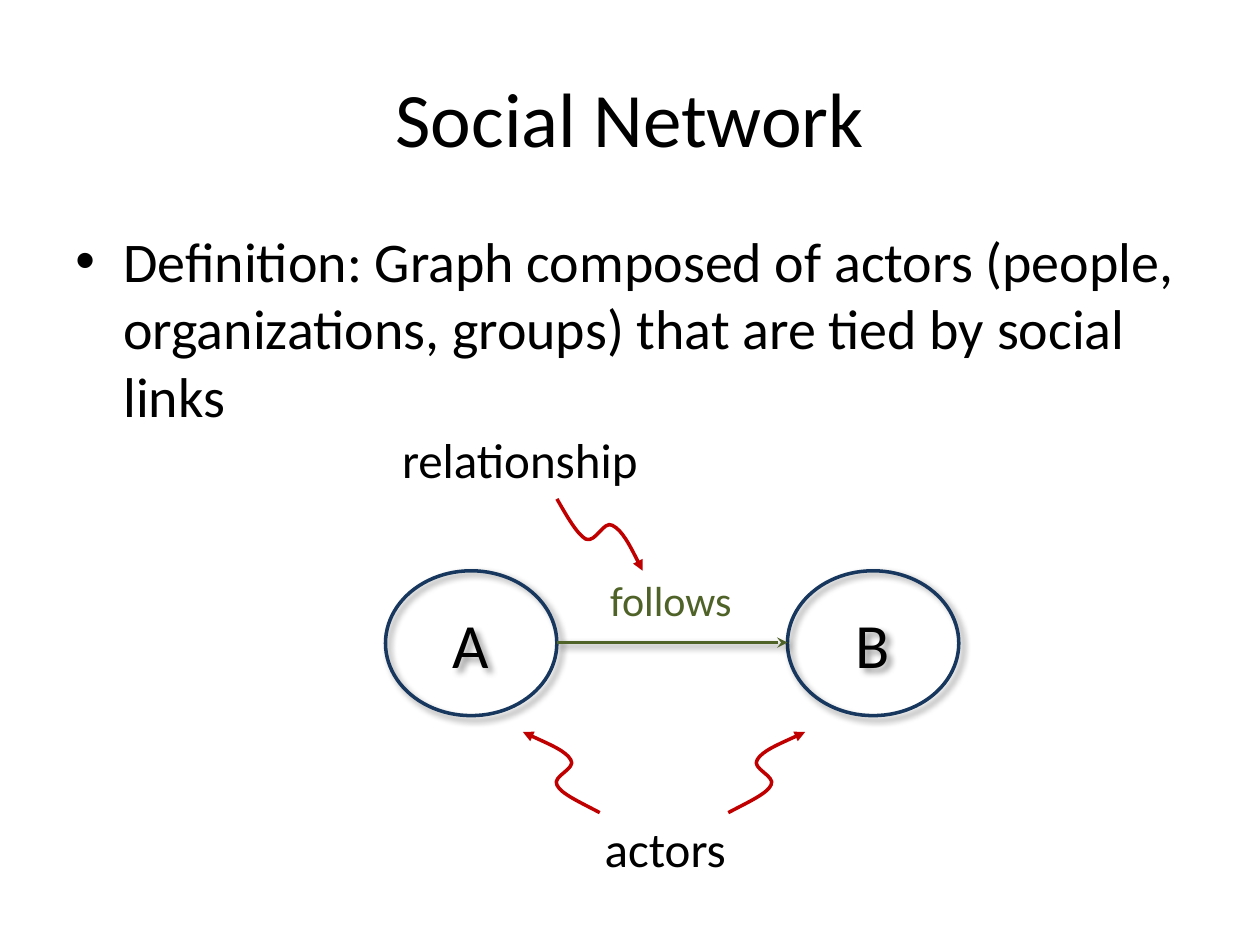
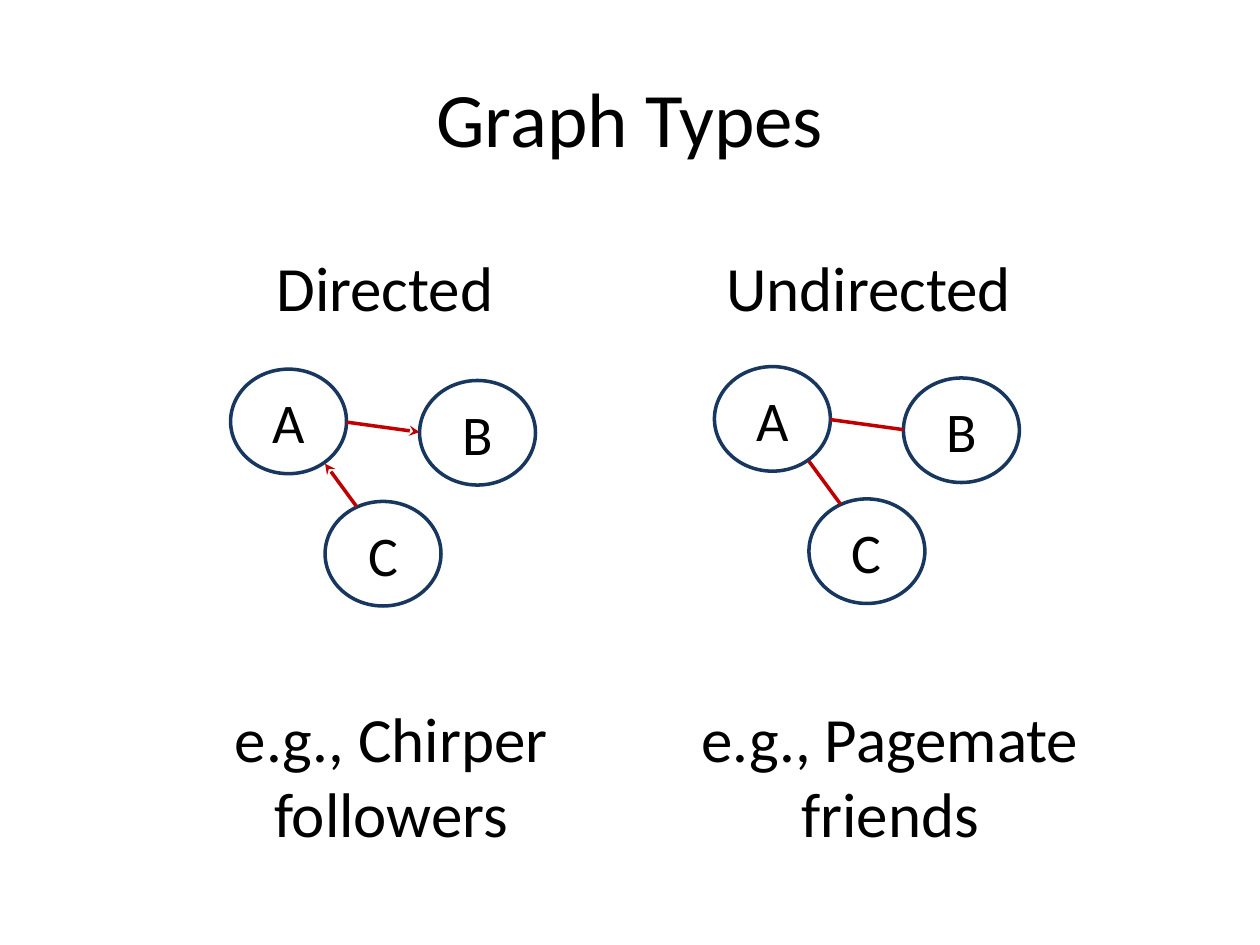
from lxml import etree
from pptx import Presentation
from pptx.dml.color import RGBColor
from pptx.enum.shapes import MSO_CONNECTOR, MSO_SHAPE
from pptx.enum.text import MSO_ANCHOR, PP_ALIGN
from pptx.oxml.ns import qn
from pptx.util import Pt

PX = 9144  # EMU per px, 100 px to the inch
FONT = "Calibri"
BLACK = RGBColor(0x00, 0x00, 0x00)
WHITE = RGBColor(0xFF, 0xFF, 0xFF)
NAVY = RGBColor(0x17, 0x37, 0x5E)
GREEN = RGBColor(0x4F, 0x62, 0x28)
RED = RGBColor(0xC0, 0x00, 0x00)

OVAL = MSO_SHAPE.OVAL
STRAIGHT = MSO_CONNECTOR.STRAIGHT
CENTER, LEFT = PP_ALIGN.CENTER, PP_ALIGN.LEFT
MIDDLE, TOP = MSO_ANCHOR.MIDDLE, MSO_ANCHOR.TOP


# ---- Shared helpers ----
def emu(*lengths):
    return [n * PX for n in lengths]


def write(sp, text, size, color=BLACK, align=CENTER, anchor=MIDDLE):
    tf = sp.text_frame
    tf.word_wrap = True
    tf.vertical_anchor = anchor
    tf.text = text
    p = tf.paragraphs[0]
    p.alignment = align
    font = p.runs[0].font
    font.name, font.size = FONT, Pt(size)
    font.color.rgb = color
    return p


def label(slide, box, text, size, color=BLACK, align=CENTER):
    sp = slide.shapes.add_textbox(*emu(*box))
    return write(sp, text, size, color, align, TOP)


def style_line(sp, color, arrow=None):
    sp.line.color.rgb = color
    sp.line.width = Pt(2)
    if arrow:
        etree.SubElement(sp.line._get_or_add_ln(), qn("a:tailEnd"), type=arrow)


def set_effects(sp, shadow=False):
    """Replace the theme effect by none, or by a soft shadow."""
    effects = etree.SubElement(sp._element.spPr, qn("a:effectLst"))
    if shadow:
        outer = etree.SubElement(effects, qn("a:outerShdw"), blurRad=str(Pt(4)),
                                 dist=str(Pt(3)), dir="2700000", algn="tl", rotWithShape="0")
        color = etree.SubElement(outer, qn("a:srgbClr"), val=str(BLACK))
        etree.SubElement(color, qn("a:alpha"), val="40000")


def add_node(shapes, box, text, size, fill=None, shadow=False):
    sp = shapes.add_shape(OVAL, *emu(*box))
    if fill is None:
        sp.fill.background()
    else:
        sp.fill.solid()
        sp.fill.fore_color.rgb = fill
    style_line(sp, NAVY)
    set_effects(sp, shadow)
    write(sp, text, size)


def add_edge(shapes, start, end, color, arrow=None, shadow=False):
    line = shapes.add_connector(STRAIGHT, *emu(*start, *end))
    style_line(line, color, arrow)
    set_effects(line, shadow)


def add_squiggle(slide, points):
    """Draw a curved pointer: a start, then three points per Bezier segment."""
    builder = slide.shapes.build_freeform(*points[0], scale=PX)
    builder.add_line_segments(points[1:], close=False)
    sp = builder.convert_to_shape()
    steps = list(sp._element.iter(qn("a:lnTo")))
    for i in range(0, len(steps), 3):
        curve = etree.Element(qn("a:cubicBezTo"))
        steps[i].addprevious(curve)
        for step in steps[i:i + 3]:
            curve.append(step[0])
            step.getparent().remove(step)
    sp.fill.background()
    style_line(sp, RED, "triangle")
    set_effects(sp)


def titled_slide(prs, title):
    slide = prs.slides.add_slide(prs.slide_layouts[5])
    sp = slide.shapes.title
    sp.left, sp.top, sp.width, sp.height = emu(50, 30, 900, 125)
    write(sp, title, 44)
    return slide


# ---- Social network slide ----
def definition(slide, box):
    p = label(slide, box, "Definition: Graph composed of actors (people, organizations, "
              "groups) that are tied by social links", 32, align=LEFT)
    p.space_before = Pt(6)
    pPr = p._p.get_or_add_pPr()
    pPr.set("marL", str(38 * PX))
    pPr.set("indent", str(-38 * PX))
    etree.SubElement(pPr, qn("a:buFont"), typeface="Arial")
    etree.SubElement(pPr, qn("a:buChar"), char="•")


def relationship_diagram(slide, left, top):
    def at(points):
        return [(left + x, top + y) for x, y in points]

    # Actors and the link between them
    for x, name in ((6, "A"), (325, "B")):
        add_node(slide.shapes, (left + x, top + 117, 136, 115), name, 36, shadow=True)
    add_edge(slide.shapes, *at([(142, 174), (325, 174)]), GREEN, "stealth", shadow=True)

    # Labels
    for x, y, w, h, text, size, color in (
            (159, 115, 147, 50, "follows", 24, GREEN),
            (159, 309, 138, 57, "actors", 28, BLACK),
            (0, 0, 225, 57, "relationship", 28, BLACK)):
        label(slide, (left + x, top + y, w, h), text, size, color)

    # Pointers; the two to the actors mirror each other
    to_link = [(142, 60), (150, 74), (158, 88), (165, 92), (173, 95),
               (179, 77), (186, 81), (194, 85), (202, 101), (210, 117)]
    to_b = [(278, 309), (293, 301), (309, 294), (312, 287), (316, 280),
            (296, 274), (301, 267), (305, 260), (322, 253), (339, 245)]
    to_a = [(454 - x, y) for x, y in to_b]
    for points in (to_link, to_b, to_a):
        add_squiggle(slide, at(points))


# ---- Graph types slide ----
def three_node_graph(slide, left, top, arrow):
    shapes = slide.shapes.add_group_shape().shapes
    for x, y, name in ((0, 0, "A"), (150, 9, "B"), (75, 105, "C")):
        add_node(shapes, (left + x, top + y, 92, 83), name, 32, WHITE)
    for x1, y1, x2, y2 in ((92, 42, 150, 50), (100, 109, 75, 75)):
        add_edge(shapes, (left + x1, top + y1), (left + x2, top + y2), RED, arrow)


def graph_type(slide, left, top, heading, example, example_dx, graph_dy, arrow=None):
    label(slide, (left, top, 321, 71), heading, 36)
    three_node_graph(slide, left + 38, top + graph_dy, arrow)
    label(slide, (left + example_dx, top + 358, 321, 131), example, 36)


def main():
    prs = Presentation()
    prs.slide_width, prs.slide_height = emu(1000, 750)

    slide = titled_slide(prs, "Social Network")
    definition(slide, (50, 175, 900, 495))
    relationship_diagram(slide, 300, 336)

    slide = titled_slide(prs, "Graph Types")
    graph_type(slide, 145, 192, "Directed", "e.g., Chirper followers", 5, 101, "stealth")
    graph_type(slide, 529, 192, "Undirected", "e.g., Pagemate friends", 17, 99)

    prs.save("out.pptx")


if __name__ == "__main__":
    main()
